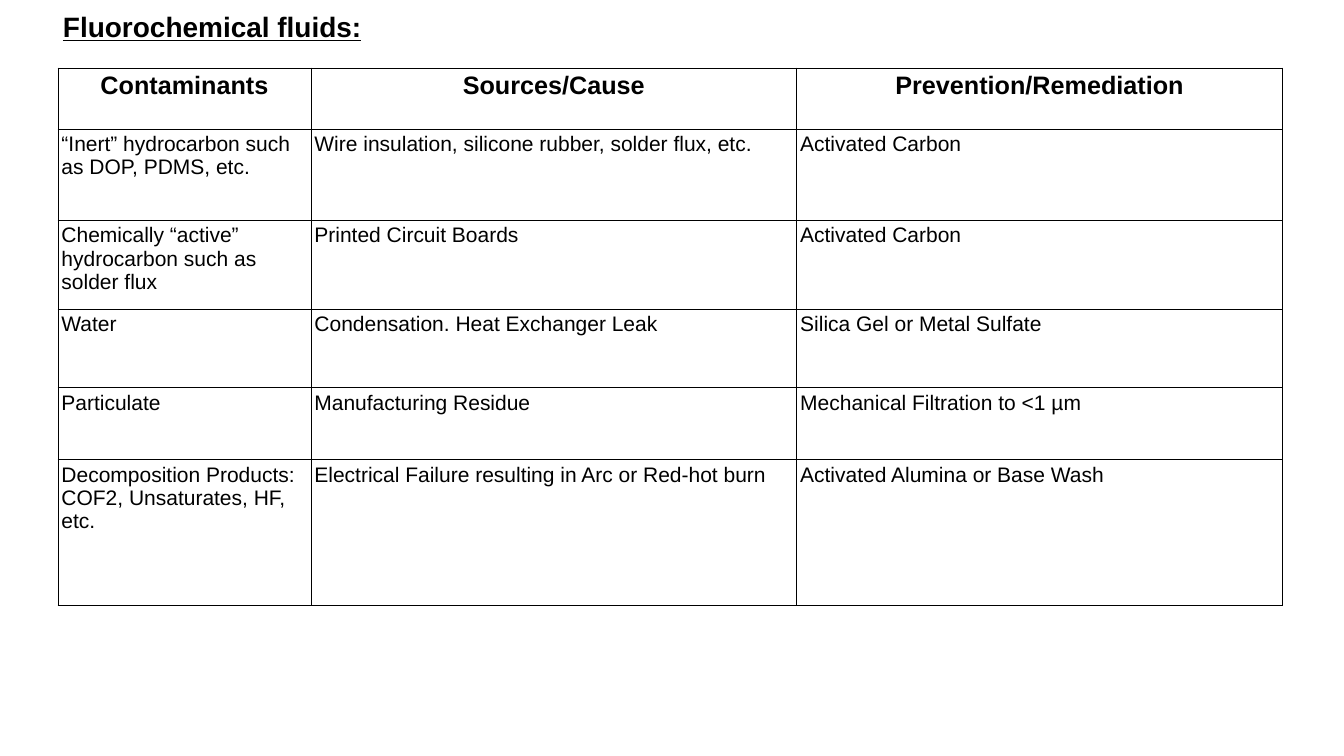
from lxml import etree
from pptx import Presentation
from pptx.dml.color import RGBColor
from pptx.enum.text import MSO_ANCHOR, PP_ALIGN
from pptx.oxml.ns import qn
from pptx.util import Pt

PX = 9144
TOP = MSO_ANCHOR.TOP
LEFT = PP_ALIGN.LEFT
CENTER = PP_ALIGN.CENTER
BLACK = "000000"
WHITE = "FFFFFF"
LEFT_EDGE = 115
CELL_MARGIN = 7
COLUMN_WIDTHS = [502, 964, 964]
ROW_HEIGHTS = [121, 181, 177, 155, 143, 289]
ROWS = [
    ["Contaminants", "Sources/Cause", "Prevention/Remediation"],
    ["“Inert” hydrocarbon such as DOP, PDMS, etc.",
     "Wire insulation, silicone rubber, solder flux, etc.", "Activated Carbon"],
    ["Chemically “active” hydrocarbon such as solder flux",
     "Printed Circuit Boards", "Activated Carbon"],
    ["Water", "Condensation. Heat Exchanger Leak", "Silica Gel or Metal Sulfate"],
    ["Particulate", "Manufacturing Residue", "Mechanical Filtration to <1 µm"],
    ["Decomposition Products: COF2, Unsaturates, HF, etc.",
     "Electrical Failure resulting in Arc or Red-hot burn",
     "Activated Alumina or Base Wash"],
]


def format_text(paragraph, size, bold, alignment):
    paragraph.alignment = alignment
    for run in paragraph.runs:
        run.font.name = "Arial"
        run.font.size = Pt(size)
        run.font.bold = bold
        run.font.color.rgb = RGBColor.from_string(BLACK)


def add_borders(cell):
    properties = cell._tc.get_or_add_tcPr()
    for side in ("a:lnL", "a:lnR", "a:lnT", "a:lnB"):
        line = etree.SubElement(properties, qn(side), w=str(Pt(1)))
        fill = etree.SubElement(line, qn("a:solidFill"))
        etree.SubElement(fill, qn("a:srgbClr"), val=BLACK)


presentation = Presentation()
presentation.slide_width = 2667 * PX
presentation.slide_height = 1500 * PX
slide = presentation.slides.add_slide(presentation.slide_layouts[5])

title = slide.shapes.title
title.left, title.top = LEFT_EDGE * PX, 14 * PX
title.width, title.height = 1333 * PX, 94 * PX
title.text_frame.text = "Fluorochemical fluids:"
title.text_frame.vertical_anchor = TOP
title_paragraph = title.text_frame.paragraphs[0]
format_text(title_paragraph, 40, True, LEFT)
title_paragraph.runs[0].font.underline = True

table = slide.shapes.add_table(
    len(ROWS), len(COLUMN_WIDTHS), LEFT_EDGE * PX, 135 * PX,
    sum(COLUMN_WIDTHS) * PX, sum(ROW_HEIGHTS) * PX).table
table.first_row = False
table.horz_banding = False

for column, width in zip(table.columns, COLUMN_WIDTHS):
    column.width = width * PX

for row_index, (row, height) in enumerate(zip(table.rows, ROW_HEIGHTS)):
    row.height = height * PX
    is_header = row_index == 0
    for cell, text in zip(row.cells, ROWS[row_index]):
        cell.margin_left = cell.margin_right = CELL_MARGIN * PX
        cell.margin_top = cell.margin_bottom = CELL_MARGIN * PX
        cell.vertical_anchor = TOP
        add_borders(cell)
        cell.fill.solid()
        cell.fill.fore_color.rgb = RGBColor.from_string(WHITE)
        cell.text_frame.text = text
        format_text(cell.text_frame.paragraphs[0], 36 if is_header else 30,
                    is_header, CENTER if is_header else LEFT)

presentation.save("out.pptx")
